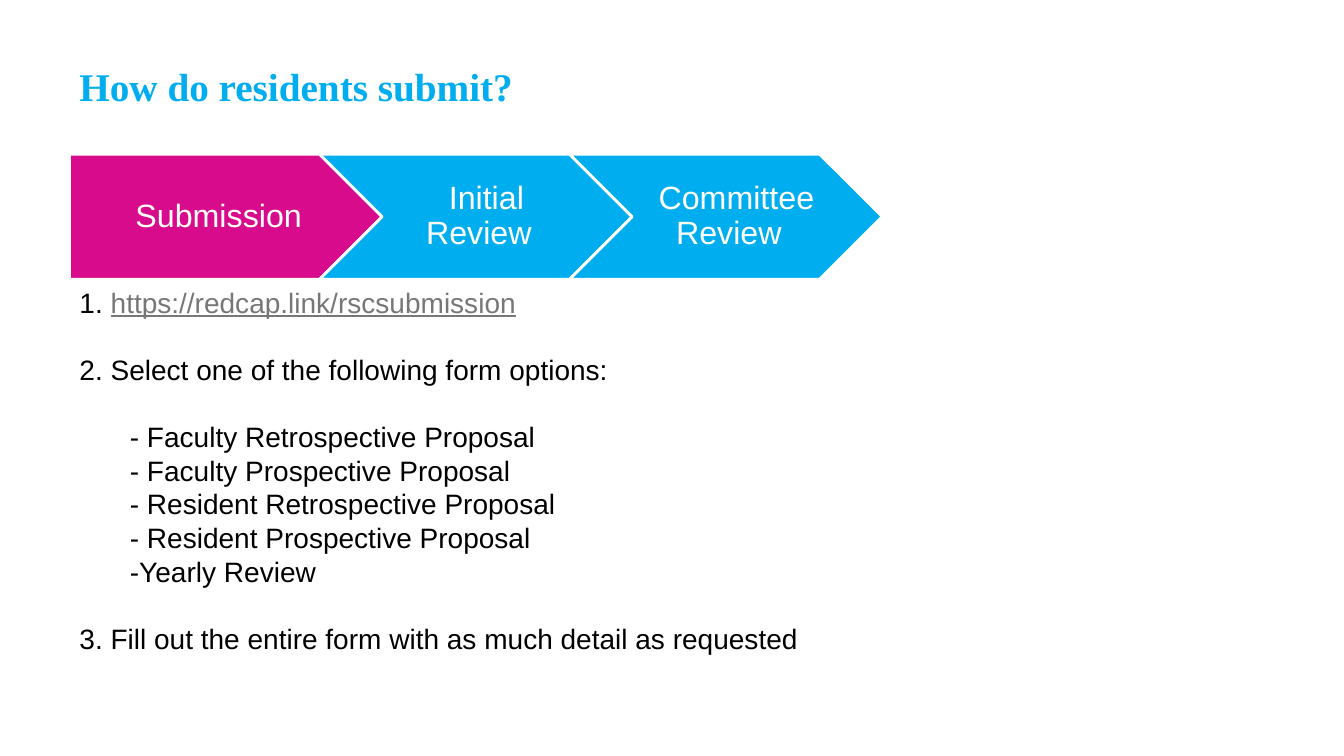
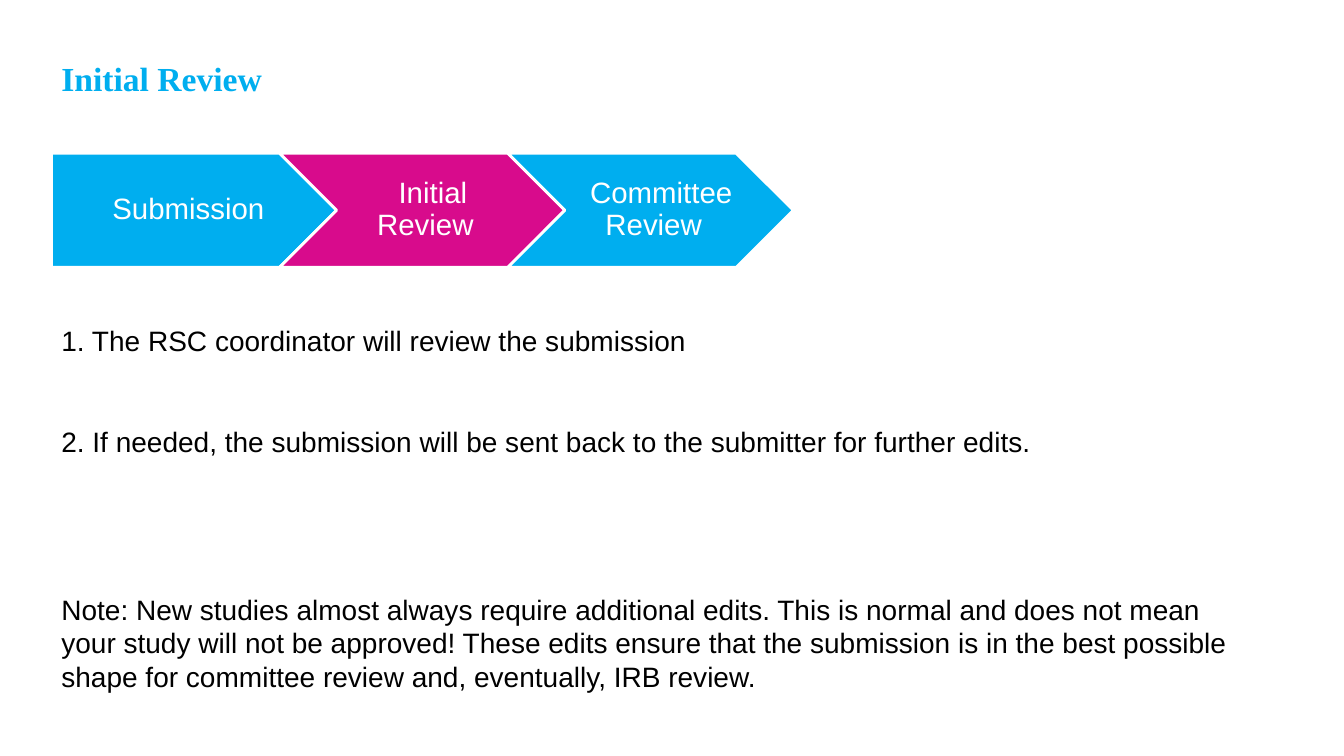
from dataclasses import dataclass

from pptx import Presentation
from pptx.dml.color import RGBColor
from pptx.enum import shapes, text
from pptx.util import Inches, Pt


@dataclass(frozen=True)
class Theme:
    accent: str = "00AEEF"
    current: str = "D80B8C"
    light: str = "FFFFFF"
    ink: str = "000000"
    link: str = "767776"
    title_font: str = "Times New Roman"
    body_font: str = "Arial"
    body_size: int = 20
    body_line: int = 24


THEME = Theme()


def write(p, words, size=THEME.body_size, color=THEME.ink, font=THEME.body_font,
          bold=False, underline=False):
    """Add one formatted run to paragraph p."""
    r = p.add_run()
    r.text = words
    r.font.name, r.font.size = font, Pt(size)
    r.font.bold, r.font.underline = bold, underline
    r.font.color.rgb = RGBColor.from_string(color)


def add_box(slide, left, top, width, height, anchor):
    tf = slide.shapes.add_textbox(
        Inches(left), Inches(top), Inches(width), Inches(height)).text_frame
    tf.word_wrap = True
    tf.vertical_anchor = anchor
    return tf


# Step label and first-line indent in inches
STEPS = [("Submission", 0.08), ("Initial Review", 0.15), ("Committee Review", 0.15)]

# Each body line: text, empty lines above it, left indent in inches, link
SLIDES = [
    dict(title="How do residents submit?", title_size=28, title_top=0.45,
         left=0.69, current=0, steps_top=1.53, step_width=3.1, step_size=23,
         body_top=2.78, body_width=11.84, body_height=4.2,
         body=[("1. ", 0, 0, "https://redcap.link/rscsubmission"),
               ("2. Select one of the following form options:", 1, 0, ""),
               ("- Faculty Retrospective Proposal", 1, 0.5, ""),
               ("- Faculty Prospective Proposal", 0, 0.5, ""),
               ("- Resident Retrospective Proposal", 0, 0.5, ""),
               ("- Resident Prospective Proposal", 0, 0.5, ""),
               ("-Yearly Review", 0, 0.5, ""),
               ("3. Fill out the entire form with as much detail as requested", 1, 0, "")]),
    dict(title="Initial Review", title_size=24, title_top=0.37,
         left=0.51, current=1, steps_top=1.52, step_width=2.83, step_size=21,
         body_top=3.16, body_width=11.81, body_height=4,
         body=[("1. The RSC coordinator will review the submission", 0, 0, ""),
               ("2. If needed, the submission will be sent back to the submitter "
                "for further edits.", 2, 0, ""),
               ("Note: New studies almost always require additional edits. This is "
                "normal and does not mean your study will not be approved! These edits "
                "ensure that the submission is in the best possible shape for committee "
                "review and, eventually, IRB review.", 4, 0, "")]),
]

prs = Presentation()
prs.slide_width, prs.slide_height = Inches(13.33), Inches(7.5)

for page in SLIDES:
    slide = prs.slides.add_slide(prs.slide_layouts[6])
    left = page["left"]

    tf = add_box(slide, left, page["title_top"], 12, 0.8, text.MSO_ANCHOR.MIDDLE)
    write(tf.paragraphs[0], page["title"], size=page["title_size"],
          color=THEME.accent, font=THEME.title_font, bold=True)

    # Body text
    tf = add_box(slide, left, page["body_top"], page["body_width"],
                 page["body_height"], text.MSO_ANCHOR.TOP)
    for i, (words, gap, indent, link) in enumerate(page["body"]):
        p = tf.add_paragraph() if i else tf.paragraphs[0]
        p.line_spacing = Pt(THEME.body_line)
        if gap:
            p.space_before = Pt(gap * THEME.body_line)
        if indent:
            p._p.get_or_add_pPr().set("marL", str(Inches(indent)))
        write(p, words)
        if link:
            write(p, link, color=THEME.link, underline=True)

    # Process arrows, each overlapping the one before by a fifth
    width = page["step_width"]
    for i, (label, indent) in enumerate(STEPS):
        kind = shapes.MSO_SHAPE.CHEVRON if i else shapes.MSO_SHAPE.PENTAGON
        sp = slide.shapes.add_shape(
            kind, Inches(left + i * 0.8 * width), Inches(page["steps_top"]),
            Inches(width), Inches(0.4 * width))
        sp.shadow.inherit = False
        sp.fill.solid()
        sp.fill.fore_color.rgb = RGBColor.from_string(
            THEME.current if i == page["current"] else THEME.accent)
        sp.line.color.rgb = RGBColor.from_string(THEME.light)
        sp.line.width = Pt(2)
        tf = sp.text_frame
        tf.word_wrap = True
        tf.vertical_anchor = text.MSO_ANCHOR.MIDDLE
        tf.margin_left, tf.margin_right = Inches(0.09 if i else 0.12), Inches(0.03)
        p = tf.paragraphs[0]
        p.alignment = text.PP_ALIGN.CENTER
        p.line_spacing = 0.9
        p._p.get_or_add_pPr().set("indent", str(Inches(indent)))
        write(p, label, size=page["step_size"], color=THEME.light)

prs.save("out.pptx")
